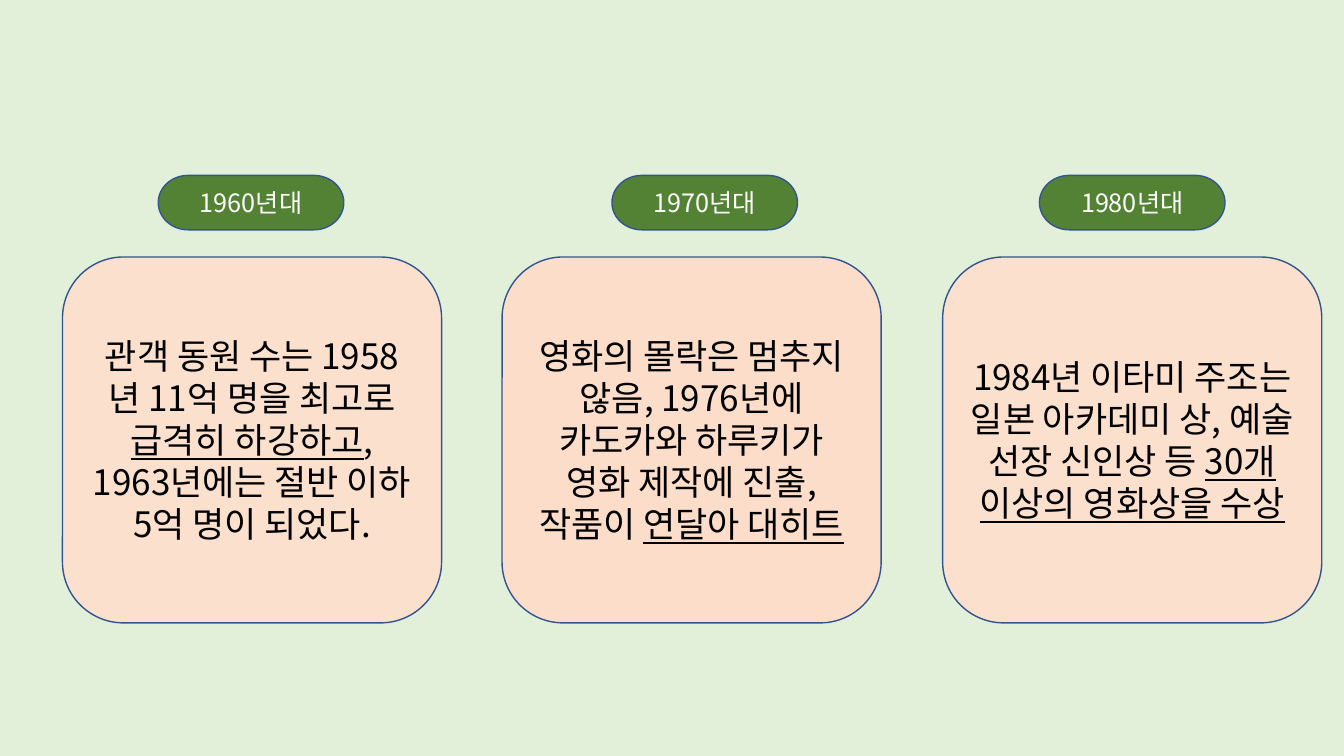
from pptx import Presentation
from pptx.dml.color import RGBColor
from pptx.enum import shapes, text
from pptx.oxml import ns
from pptx.util import Inches, Pt
from lxml import etree

FONT = "Noto Sans CJK KR"
MINT = RGBColor(0xE2, 0xF0, 0xD9)
GREEN = RGBColor(0x54, 0x82, 0x35)
PEACH = RGBColor(0xFB, 0xE0, 0xCD)
CORAL = RGBColor(0xFB, 0xDD, 0xC9)
NAVY = RGBColor(0x32, 0x54, 0x91)
BLACK = RGBColor(0, 0, 0)
WHITE = RGBColor(0xFF, 0xFF, 0xFF)

deck = Presentation()
deck.slide_width = Inches(13.33)
deck.slide_height = Inches(7.5)
slide = deck.slides.add_slide(deck.slide_layouts[6])
slide.background.fill.solid()
slide.background.fill.fore_color.rgb = MINT


def add_box(kind, left, top, width, height, fill, runs, size, ink):
    """Draw a filled shape with centred text; runs are (words, underlined) pairs."""
    box = slide.shapes.add_shape(
        kind, Inches(left), Inches(top), Inches(width), Inches(height))
    box.shadow.inherit = False
    box.fill.solid()
    box.fill.fore_color.rgb = fill
    box.line.color.rgb = NAVY
    box.line.width = Pt(1)
    frame = box.text_frame
    frame.word_wrap = True
    frame.vertical_anchor = text.MSO_ANCHOR.MIDDLE
    para = frame.paragraphs[0]
    para.alignment = text.PP_ALIGN.CENTER
    for words, under in runs:
        run = para.add_run()
        run.text = words
        font = run.font
        font.name = FONT
        font.size = Pt(size)
        font.color.rgb = ink
        font.underline = under
        # Hangul takes its typeface from the East Asian font
        props = run._r.get_or_add_rPr()
        etree.SubElement(props, ns.qn("a:ea"), typeface=FONT)


# decade, label left, card left, card fill, card text
decades = [
    ("1960년대", 1.57, 0.62, PEACH, [
        ("관객 동원 수는 1958년 11억 명을 최고로 ", False),
        ("급격히 하강하고", True),
        (", 1963년에는 절반 이하 5억 명이 되었다.", False)]),
    ("1970년대", 6.07, 4.98, CORAL, [
        ("영화의 몰락은 멈추지 않음, 1976년에 카도카와 하루키가 "
         "영화 제작에 진출, 작품이 ", False),
        ("연달아 대히트", True)]),
    ("1980년대", 10.31, 9.35, PEACH, [
        ("1984년 이타미 주조는 일본 아카데미 상, 예술 선장 신인상 등 ", False),
        ("30개 이상의 영화상을 수상", True)]),
]

for name, tab, card, fill, runs in decades:
    add_box(shapes.MSO_SHAPE.ROUNDED_RECTANGLE, card, 2.55, 3.76, 3.63,
            fill, runs, 25, BLACK)
    add_box(shapes.MSO_SHAPE.FLOWCHART_TERMINATOR, tab, 1.74, 1.84, 0.54,
            GREEN, [(name, False)], 18, WHITE)

deck.save("out.pptx")
